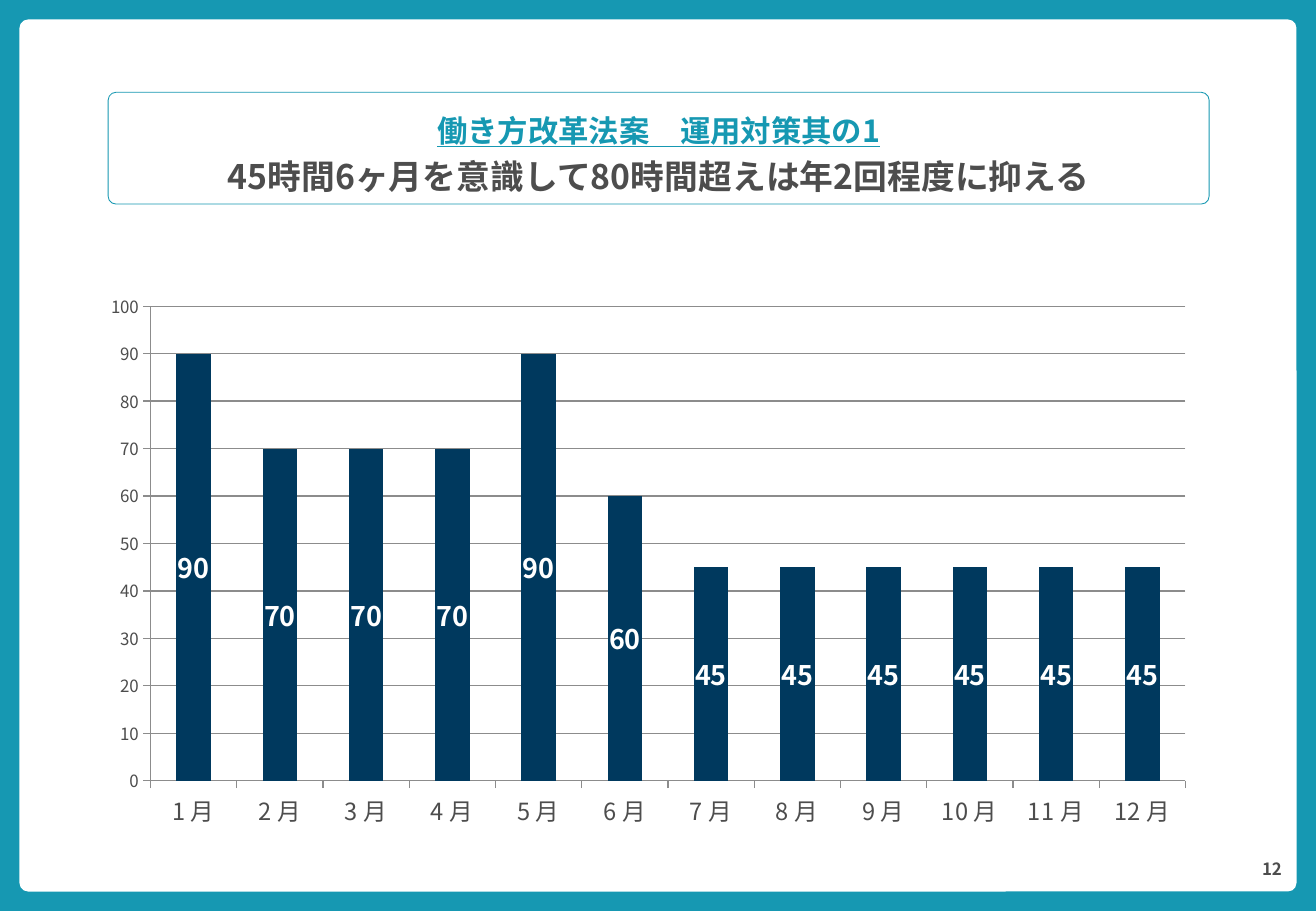
import pptx
import pptx.chart.data
import pptx.dml.color
import pptx.enum.chart
import pptx.enum.shapes
import pptx.enum.text
import pptx.oxml.ns
import pptx.oxml.xmlchemy
import pptx.util

WIDTH, HEIGHT = 10.83, 7.5
BORDER = 0.16
FONT = "Noto Sans CJK JP"
COLORS = {"teal": "1698B2", "white": "FFFFFF", "text": "4D4D4D",
          "navy": "00395E", "grid": "8C8C8C"}
MONTHLY_HOURS = [90, 70, 70, 70, 90, 60] + [45] * 6
SHAPES = pptx.enum.shapes.MSO_SHAPE
ALIGN = pptx.enum.text.PP_ALIGN
inches = pptx.util.Inches


def color(name):
    return pptx.dml.color.RGBColor.from_string(COLORS[name])


def area(left, top, width, height):
    return [inches(share * side) for share, side in
            zip((left, top, width, height), (WIDTH, HEIGHT) * 2)]


def style_font(font, size, tone="text", bold=False, underline=False):
    font.name = FONT
    font.size = pptx.util.Pt(size)
    font.bold = bold
    font.underline = underline
    font.color.rgb = color(tone)


def style_line(line, tone, width):
    line.color.rgb = color(tone)
    line.width = pptx.util.Pt(width)


def add_panel(slide, kind, place, fill=None, outline=None, radius=None):
    panel = slide.shapes.add_shape(kind, *place)
    panel.shadow.inherit = False
    if fill:
        panel.fill.solid()
        panel.fill.fore_color.rgb = color(fill)
    else:
        panel.fill.background()
    if outline:
        style_line(panel.line, outline, 0.5)
    else:
        panel.line.fill.background()
    if radius is not None:
        panel.adjustments[0] = radius
    return panel


def write(paragraph, text, align, spacing=1.0, **style):
    paragraph.alignment = align
    paragraph.line_spacing = spacing
    run = paragraph.add_run()
    run.text = text
    style_font(run.font, **style)


def prepare_frame(frame, left=0, top=0, right=0, bottom=0):
    frame.word_wrap = True
    frame.vertical_anchor = pptx.enum.text.MSO_ANCHOR.MIDDLE
    frame.margin_left, frame.margin_top = inches(left), inches(top)
    frame.margin_right, frame.margin_bottom = inches(right), inches(bottom)
    return frame.paragraphs[0]


def add_border(slide):
    add_panel(slide, SHAPES.RECTANGLE, area(0, 0, 1, 1), fill="teal")
    across, down = BORDER / WIDTH, BORDER / HEIGHT
    add_panel(slide, SHAPES.ROUNDED_RECTANGLE,
              area(across, down, 1 - 2 * across, 1 - 2 * down),
              fill="white", radius=0.01)


def add_heading(slide):
    heading = add_panel(slide, SHAPES.ROUNDED_RECTANGLE,
                        area(0.0822, 0.1013, 0.8366, 0.1227),
                        outline="teal", radius=0.07)
    paragraph = prepare_frame(heading.text_frame, 0.2, 0.08, 0.2, 0.04)
    write(paragraph, "働き方改革法案　運用対策其の1", ALIGN.CENTER, 1.2,
          size=18, tone="teal", bold=True, underline=True)
    paragraph.add_line_break()
    write(paragraph, "45時間6ヶ月を意識して80時間超えは年2回程度に抑える", ALIGN.CENTER, 1.2,
          size=20, bold=True)


def add_page_number(slide):
    number = slide.shapes.add_textbox(*area(0.7405, 0.9347, 0.2336, 0.0373))
    write(prepare_frame(number.text_frame), "12", ALIGN.RIGHT, size=10, bold=True)


def style_axis(axis, size):
    axis.major_tick_mark = pptx.enum.chart.XL_TICK_MARK.OUTSIDE
    axis.minor_tick_mark = pptx.enum.chart.XL_TICK_MARK.NONE
    style_line(axis.format.line, "grid", 0.75)
    style_font(axis.tick_labels.font, size)


def add_hours_chart(slide):
    hours = pptx.chart.data.CategoryChartData()
    hours.categories = [f"{month} 月" for month in range(1, 13)]
    hours.add_series("Series 1", MONTHLY_HOURS)
    chart = slide.shapes.add_chart(
        pptx.enum.chart.XL_CHART_TYPE.COLUMN_CLUSTERED,
        *area(0.0674, 0.3107, 0.8504, 0.6093), hours).chart
    chart.has_legend = False
    chart.has_title = False
    style_font(chart.font, 10)
    style_axis(chart.category_axis, 14)
    style_axis(chart.value_axis, 10)
    scale = chart.value_axis
    scale.minimum_scale, scale.maximum_scale, scale.major_unit = 0, 100, 10
    scale.has_major_gridlines = True
    style_line(scale.major_gridlines.format.line, "grid", 0.75)

    plot = chart.plots[0]
    plot.gap_width = 150
    plot.vary_by_categories = False
    bars = plot.series[0].format.fill
    bars.solid()
    bars.fore_color.rgb = color("navy")
    plot.has_data_labels = True
    labels = plot.data_labels
    labels.show_value = True
    labels.position = pptx.enum.chart.XL_LABEL_POSITION.CENTER
    style_font(labels.font, 16, "white", bold=True)
    return chart


def set_east_asian_font(element):
    for latin in list(element.iter(pptx.oxml.ns.qn("a:latin"))):
        east_asian = latin.makeelement(pptx.oxml.ns.qn("a:ea"), {"typeface": FONT})
        latin.addnext(east_asian)


def main():
    deck = pptx.Presentation()
    deck.slide_width, deck.slide_height = inches(WIDTH), inches(HEIGHT)
    slide = deck.slides.add_slide(deck.slide_layouts[6])
    add_border(slide)
    add_page_number(slide)
    add_heading(slide)
    chart = add_hours_chart(slide)
    set_east_asian_font(slide.element)
    set_east_asian_font(chart.element)
    deck.save("out.pptx")


if __name__ == "__main__":
    main()
